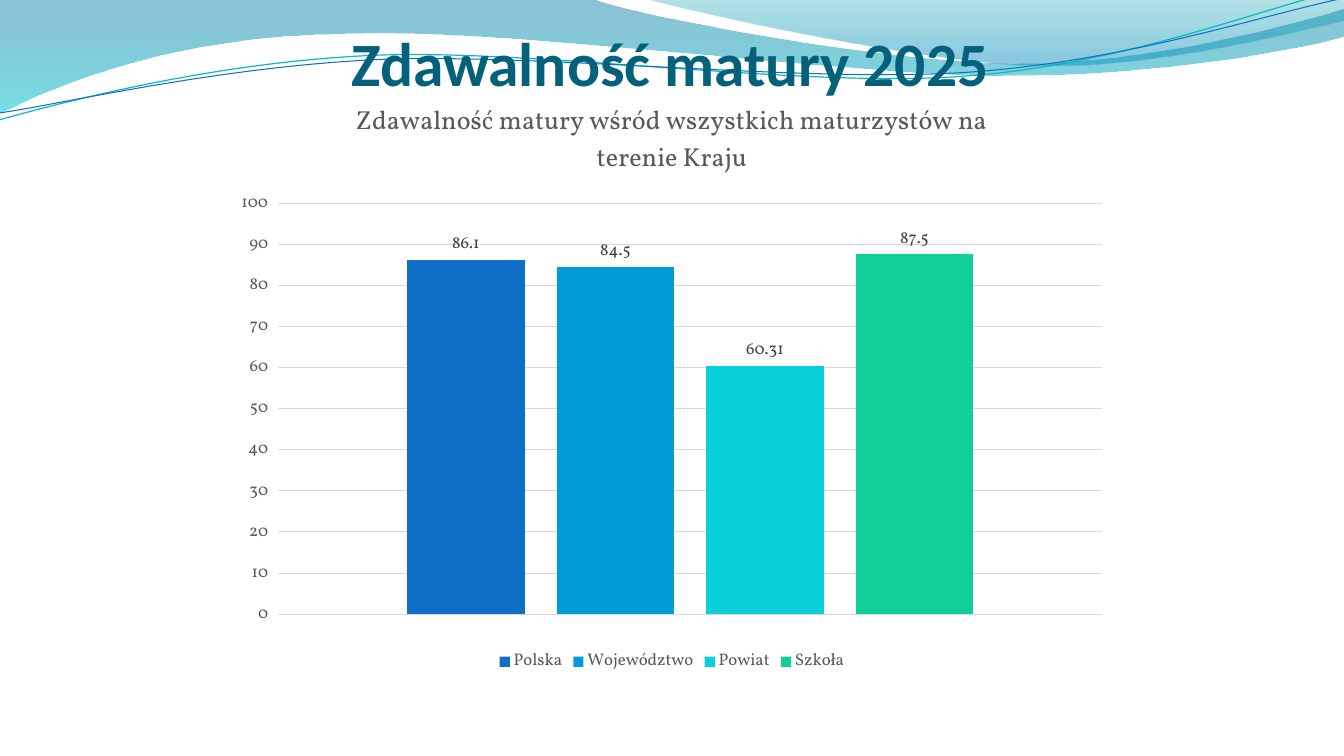
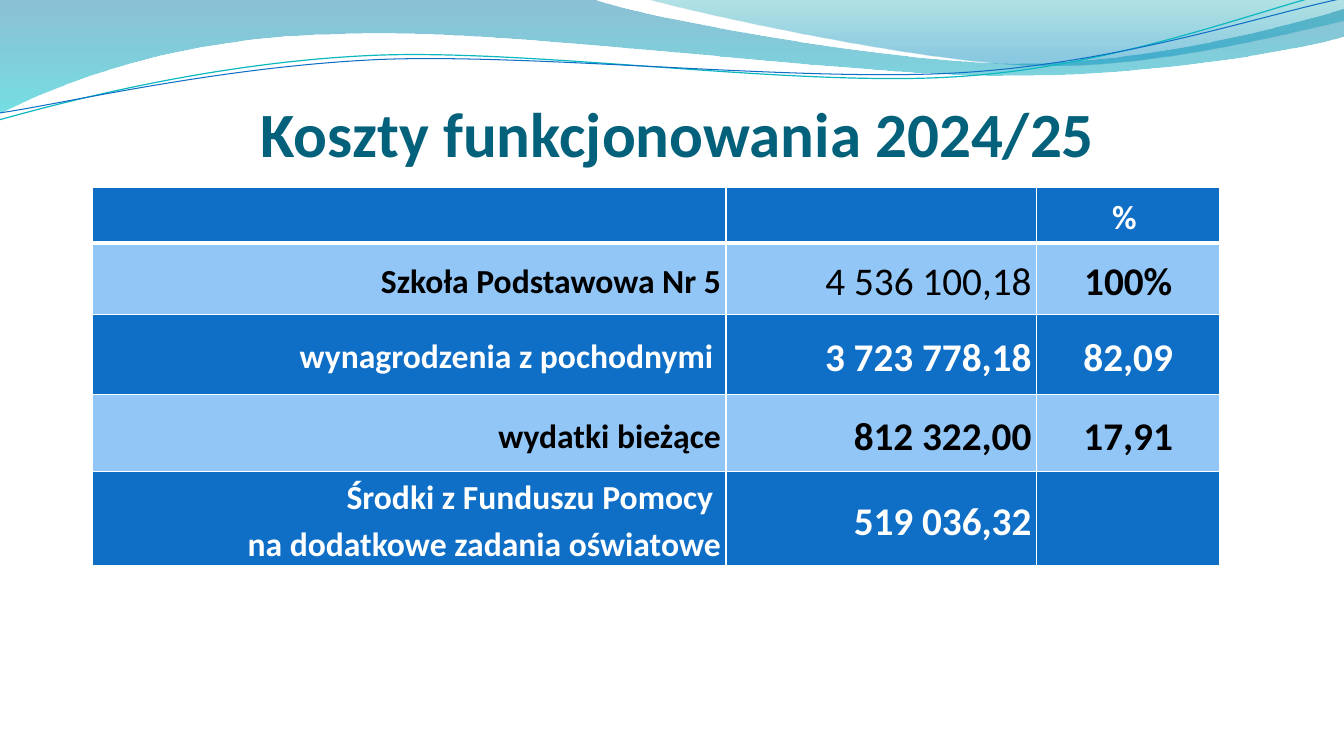
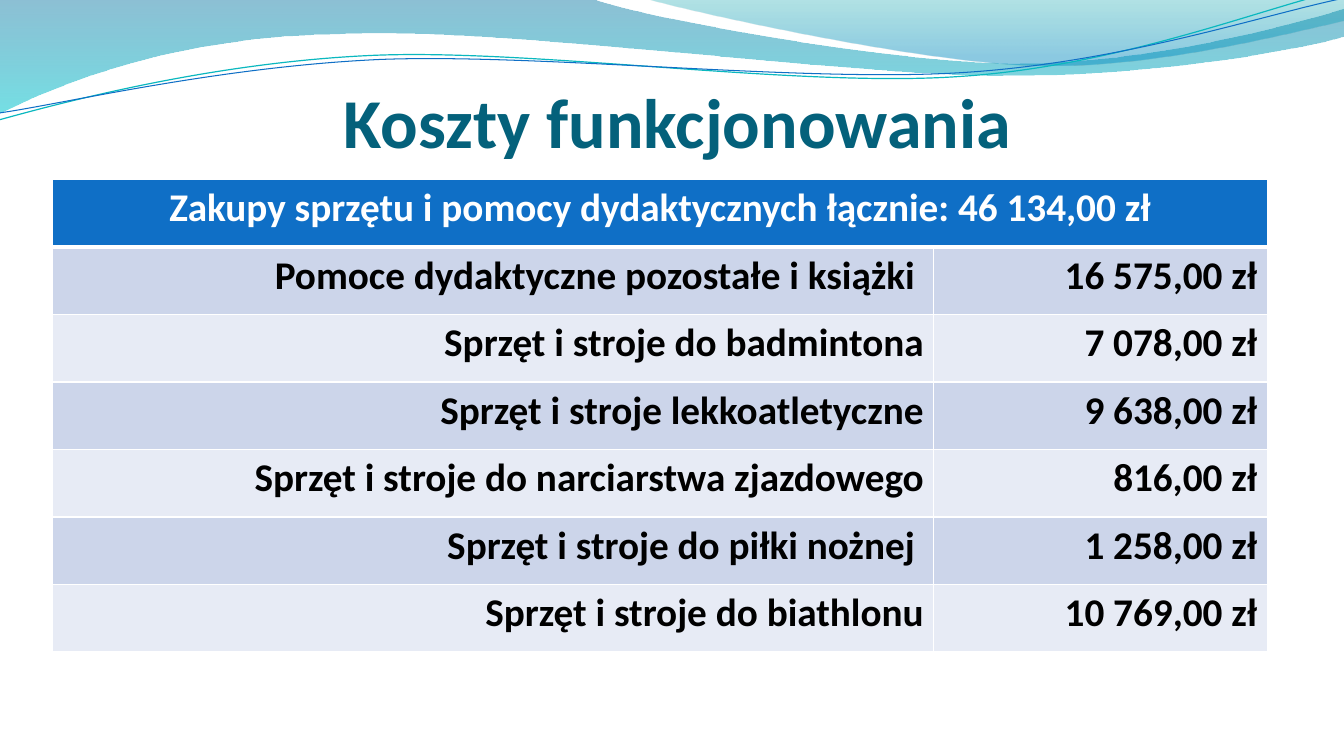
from math import cos, radians, sin

from pptx import Presentation
from pptx.chart.data import CategoryChartData
from pptx.dml.color import RGBColor
from pptx.enum.chart import XL_CHART_TYPE as Kind, XL_LABEL_POSITION as Spot, XL_LEGEND_POSITION as Side
from pptx.enum.text import MSO_ANCHOR as Anchor, MSO_AUTO_SIZE as Fit, PP_ALIGN as Align
from pptx.oxml import parse_xml
from pptx.oxml.ns import nsdecls, qn
from pptx.oxml.xmlchemy import OxmlElement as Node
from pptx.util import Inches, Pt

# Shared style
FONT, SERIF = "Calibri", "Vollkorn"
TITLE, BLUE, SKY = "04617B", "0F6FC6", "91C6F7"
WHITE, BLACK, GREY = "FFFFFF", "000000", "595959"
BANDS = ("CCD5EA", "E7EBF5")
C, R = Align.CENTER, Align.RIGHT
TILT = 357.3

# Waves: start, then straight steps (2 numbers) or Bezier steps (6 numbers)
FILLS = [
    ((0, 0), [(5.87, -0.01), (6.34, 0.17, 8.85, 0.63, 10.11, 0.63),
              (11.38, 0.63, 12.78, 0.26, 13.33, 0.09), (13.35, 0.36),
              (13.11, 0.44, 11.6, 0.76, 9.94, 0.75),
              (8.29, 0.75, 5.09, 0.28, 3.43, 0.34),
              (1.72, 0.36, 0.61, 0.83, -0.01, 1.13), (0, 0)],
     [(0, "0074A1", 45), (1, "00C6CF", 55)]),
    ((6.39, -0.01), [(6.79, 0.11, 9.09, 0.62, 10.25, 0.65),
                     (11.41, 0.69, 12.82, 0.32, 13.33, 0.21), (13.33, 0),
                     (6.39, -0.01)],
     [(0, "00A1A9", 30), (0.8, "008BBF", 45)]),
]
# Lines: start, steps, pivot of the tilt, colour, width
LINES = [
    ((-0.01, 1.19), [(0.64, 1.01, 2.11, 0.62, 3.69, 0.55),
                     (5.27, 0.48, 7.9, 0.87, 9.5, 0.76),
                     (11.1, 0.66, 12.52, 0.08, 13.31, -0.1)],
     (6.65, 0.57), "0AB8BF", 0.85),
    ((0, 1.12), [(0.63, 1.03, 2.18, 0.66, 3.78, 0.59),
                 (5.37, 0.53, 7.96, 0.82, 9.55, 0.72),
                 (11.15, 0.62, 12.55, 0.14, 13.34, -0.02)],
     (6.67, 0.59), BLUE, 0.75),
]

# Slide content
HEADS = [
    ("Zdawalność matury 2025", 44, (0.1, 0.13, 13.1, 0.85)),
    ("Koszty funkcjonowania 2024/25", 45, (2.18, 0.76, 9.08, 0.93)),
    ("Koszty funkcjonowania", 50, (2.18, 0.68, 9.08, 0.93)),
]
CAPTION = "Zdawalność matury wśród wszystkich maturzystów na terenie Kraju"
RATES = [("Polska", 86.1, BLUE), ("Województwo", 84.5, "009DD9"),
         ("Powiat", 60.31, "0BD0D9"), ("Szkoła", 87.5, "10CF9B")]
# Plot area in percent of the chart
AREA = {"x": 6.05, "y": 20.65, "w": 91.96, "h": 68.8}
# Each block: top, row heights, rows
COSTS = [
    (1.86, (0.55, 0.71), [("", "", "% "),
                          ("Szkoła Podstawowa Nr 5", "4 536 100,18", "100%")]),
    (3.12, (0.79,), [("wynagrodzenia z pochodnymi ", "3 723 778,18", "82,09")]),
    (3.91, (0.79,), [("wydatki bieżące", "812 322,00", "17,91")]),
    (4.68, (0.89,), [("Środki z Funduszu Pomocy \nna dodatkowe zadania oświatowe",
                      "519 036,32", "")]),
]
TOTAL = "Zakupy sprzętu i pomocy dydaktycznych łącznie: 46 134,00 zł"
BUYS = [
    ("Pomoce dydaktyczne pozostałe i książki ", "16 575,00 zł"),
    ("Sprzęt i stroje do badmintona", "7 078,00 zł"),
    ("Sprzęt i stroje lekkoatletyczne", "9 638,00 zł"),
    ("Sprzęt i stroje do narciarstwa zjazdowego", "816,00 zł"),
    ("Sprzęt i stroje do piłki nożnej ", "1 258,00 zł"),
    ("Sprzęt i stroje do biathlonu", "10 769,00 zł"),
]


def rgb(color):
    return RGBColor.from_string(color)


def style(font, size, color, face=FONT, bold=False):
    font.size, font.name, font.bold = Pt(size), face, bold
    font.color.rgb = rgb(color)


def write(par, text, size, color, align, bold=True, face=FONT):
    par.alignment = align
    for n, part in enumerate(text.split("\n")):
        if n:
            par.add_line_break()
        run = par.add_run()
        run.text = part
        style(run.font, size, color, face, bold)


# Waves on the layout
def level(point, pivot):
    """Undo the tilt around the pivot."""
    turn = radians(360 - TILT)
    x, y = point[0] - pivot[0], point[1] - pivot[1]
    return (pivot[0] + x * cos(turn) - y * sin(turn),
            pivot[1] + x * sin(turn) + y * cos(turn))


def wave(slide, start, steps, close, pivot=None):
    points = [start] + [step[n:n + 2] for step in steps for n in range(0, len(step), 2)]
    if pivot:
        points = [level(point, pivot) for point in points]
    points = [(Inches(x), Inches(y)) for x, y in points]
    pen = slide.shapes.build_freeform(*points[0])
    pen.add_line_segments(points[1:], close=close)
    shape = pen.convert_to_shape()
    shape.shadow.inherit = False
    # Join each three segments of a Bezier step into one curve
    legs = iter(list(shape.element.iter(qn("a:lnTo"))))
    for step in steps:
        trio = [next(legs) for _ in range(len(step) // 2)]
        if len(trio) == 3:
            curve = Node("a:cubicBezTo")
            trio[0].addprevious(curve)
            for leg in trio:
                curve.append(leg[0])
                leg.getparent().remove(leg)
    return shape


def settle(shape, layout, number):
    shape.element.find(".//" + qn("p:cNvPr")).set("id", str(number))
    layout.shapes.element.append(shape.element)


def decorate(slide):
    layout = slide.slide_layout
    for n, (start, steps, stops) in enumerate(FILLS):
        shape = wave(slide, start, steps, True)
        shape.line.fill.background()
        shape.fill.gradient()
        shape.fill.gradient_angle = 270
        for stop, (place, color, _) in zip(shape.fill.gradient_stops, stops):
            stop.position, stop.color.rgb = place, rgb(color)
        for tint, stop in zip(shape.element.iter(qn("a:srgbClr")), stops):
            alpha = Node("a:alpha")
            alpha.set("val", str(stop[2] * 1000))
            tint.append(alpha)
        settle(shape, layout, 20 + n)
    for n, (start, steps, pivot, color, width) in enumerate(LINES):
        shape = wave(slide, start, steps, False, pivot)
        shape.rotation = TILT
        shape.fill.background()
        shape.line.color.rgb, shape.line.width = rgb(color), Pt(width)
        settle(shape, layout, 30 + n)


def head(slide, text, size, box):
    title = slide.shapes.title
    title.left, title.top, title.width, title.height = map(Inches, box)
    frame = title.text_frame
    frame.auto_size, frame.vertical_anchor = Fit.NONE, Anchor.BOTTOM
    frame.margin_left = frame.margin_right = frame.margin_bottom = 0
    frame.margin_top = Inches(0.05)
    write(frame.paragraphs[0], text, size, TITLE, C)


# Tables
def grid(slide, left, top, cols, rows, header):
    frame = slide.shapes.add_table(len(rows), len(cols), Inches(left), Inches(top),
                                   Inches(sum(cols)), Inches(sum(rows)))
    table = frame.table
    table.first_row, table.horz_banding = header, False
    for items, sizes, name in ((table.columns, cols, "width"), (table.rows, rows, "height")):
        for item, size in zip(items, sizes):
            setattr(item, name, Inches(size))
    return table


def paint(cell, color, top=1, bottom=1):
    cell.fill.solid()
    cell.fill.fore_color.rgb = rgb(color)
    props = cell._tc.get_or_add_tcPr()
    for n, (side, width) in enumerate((("L", 1), ("R", 1), ("T", top), ("B", bottom))):
        props.insert(n, parse_xml(
            f'<a:ln{side} {nsdecls("a")} w="{Pt(width)}"><a:solidFill>'
            f'<a:srgbClr val="{WHITE}"/></a:solidFill></a:ln{side}>'))


def costs(slide):
    shade = 0
    for top, heights, rows in COSTS:
        header = len(rows) > 1
        table = grid(slide, 0.92, top, (6.28, 3.08, 1.82), heights, header)
        for r, row in enumerate(rows):
            fill, ink = ((BLUE, WHITE), (SKY, BLACK))[shade % 2]
            shade += 1
            for c, text in enumerate(row):
                cell = table.cell(r, c)
                paint(cell, fill, 3 if r else 1, 3 if header and not r else 1)
                cell.vertical_anchor = Anchor.MIDDLE
                cell.margin_left = cell.margin_right = Inches(0.05)
                cell.margin_top = cell.margin_bottom = 0
                if text:
                    par = cell.text_frame.paragraphs[0]
                    par.line_spacing = 1.15
                    size = 28 if c and text != "% " else 24
                    write(par, text, size, ink, C if c == 2 else R,
                          bold=text != "4 536 100,18")


def buys(slide):
    table = grid(slide, 0.52, 1.78, (8.74, 3.31), [0.67] * (len(BUYS) + 1), True)
    table.cell(0, 0).merge(table.cell(0, 1))
    for c in (0, 1):
        paint(table.cell(0, c), BLUE, bottom=3)
    write(table.cell(0, 0).text_frame.paragraphs[0], TOTAL, 28, WHITE, C)
    for r, row in enumerate(BUYS, 1):
        for c, text in enumerate(row):
            cell = table.cell(r, c)
            paint(cell, BANDS[(r - 1) % 2], top=3 if r == 1 else 1)
            write(cell.text_frame.paragraphs[0], text, 28, BLACK, R)


# Chart
def rates(slide):
    data = CategoryChartData()
    data.categories = ["1"]
    for name, value, _ in RATES:
        data.add_series(name, [value])
    box = map(Inches, (2.22, 0.79, 8.89, 5.93))
    chart = slide.shapes.add_chart(Kind.COLUMN_CLUSTERED, *box, data).chart
    style(chart.font, 10, BLACK, SERIF)
    chart.has_title = True
    write(chart.chart_title.text_frame.paragraphs[0], CAPTION, 18.6, GREY, C, False, SERIF)
    chart.chart_title.include_in_layout = False
    chart.has_legend = True
    chart.legend.position, chart.legend.include_in_layout = Side.BOTTOM, False
    style(chart.legend.font, 12, GREY, SERIF)

    chart.category_axis.visible = False
    axis = chart.value_axis
    axis.minimum_scale, axis.maximum_scale, axis.major_unit = 0, 100, 10
    axis.format.line.fill.background()
    axis.major_gridlines.format.line.color.rgb = rgb("D9D9D9")
    axis.major_gridlines.format.line.width = Pt(0.75)
    style(axis.tick_labels.font, 12, GREY, SERIF)

    plot = chart.plots[0]
    plot.gap_width, plot.overlap, plot.vary_by_categories = 219, -27, False
    for bar, (_, _, color) in zip(plot.series, RATES):
        bar.format.fill.solid()
        bar.format.fill.fore_color.rgb = rgb(color)
        labels = bar.data_labels
        labels.show_value, labels.position = True, Spot.OUTSIDE_END
        style(labels.font, 12, "404040", SERIF)

    # Fixed inner plot area
    area = chart.element.find(".//" + qn("c:plotArea"))
    old = area.find(qn("c:layout"))
    if old is not None:
        area.remove(old)
    parts = [("layoutTarget", "inner"), ("xMode", "edge"), ("yMode", "edge")]
    parts += [(tag, part / 100) for tag, part in AREA.items()]
    inner = "".join(f'<c:{tag} val="{val}"/>' for tag, val in parts)
    area.insert(0, parse_xml(f'<c:layout {nsdecls("c")}><c:manualLayout>{inner}'
                             '</c:manualLayout></c:layout>'))


def main():
    prs = Presentation()
    prs.slide_width, prs.slide_height = Inches(13.33), Inches(7.5)
    for n, (title, fill) in enumerate(zip(HEADS, (rates, costs, buys))):
        slide = prs.slides.add_slide(prs.slide_layouts[5])
        if n == 0:
            decorate(slide)
        head(slide, *title)
        fill(slide)
    prs.save("out.pptx")


if __name__ == "__main__":
    main()
